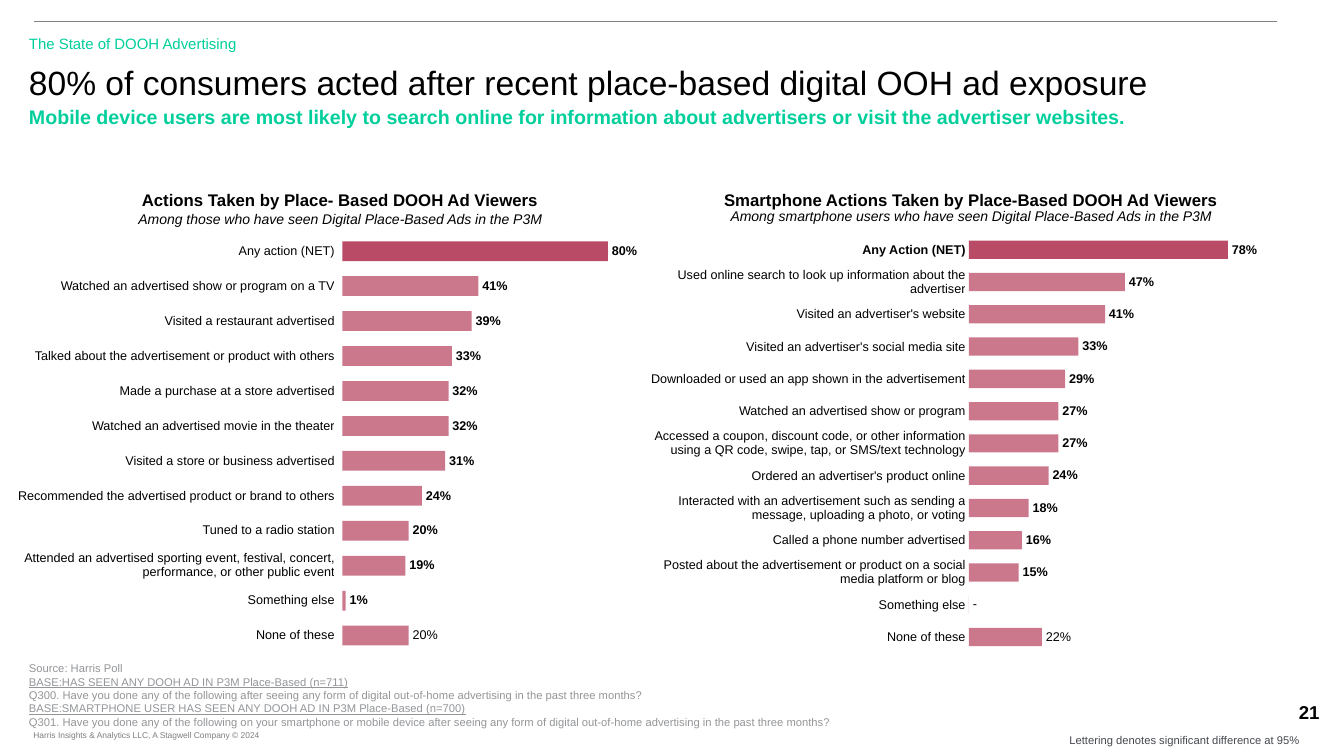
from lxml.etree import SubElement
from pptx import Presentation
from pptx.chart.data import CategoryChartData
from pptx.dml.color import RGBColor
from pptx.enum.chart import XL_CHART_TYPE as ChartType, XL_LABEL_POSITION as LabelPosition
from pptx.enum.shapes import MSO_CONNECTOR as Connector
from pptx.enum.text import MSO_ANCHOR as Anchor, MSO_AUTO_SIZE as AutoSize, PP_ALIGN as Align
from pptx.oxml import parse_xml
from pptx.oxml.ns import nsdecls, qn
from pptx.util import Cm, Pt

COLORS = {"black": "000000", "green": "00CF9C", "source": "939598", "copyright": "7F7F7F",
          "note": "44474E", "rule": "808080", "bar": "BA4C67", "net bar": "A31034"}
INSETS = (0.25, 0.13, 0.25, 0.13)
LABEL_WIDTH = 8.15    # answer column of a panel
BAR_START = 8.34      # zero line, from the panel's left edge
BAR_FULL = 8.37       # length of a 100% bar
HEADING_DROP = 1.24   # from a panel's top to its rows

VIEWER_ACTIONS = [
    ("Any action (NET)", 0.80), ("Watched an advertised show or program on a TV", 0.41),
    ("Visited a restaurant advertised", 0.39),
    ("Talked about the advertisement or product with others", 0.33),
    ("Made a purchase at a store advertised", 0.32),
    ("Watched an advertised movie in the theater", 0.32),
    ("Visited a store or business advertised", 0.31),
    ("Recommended the advertised product or brand to others", 0.24),
    ("Tuned to a radio station", 0.20),
    ("Attended an advertised sporting event, festival, concert, performance, "
     "or other public event", 0.19),
    ("Something else", 0.01), ("None of these", 0.20)]
PHONE_ACTIONS = [
    ("Any Action (NET)", 0.78),
    ("Used online search to look up information about the advertiser", 0.47),
    ("Visited an advertiser's website", 0.41),
    ("Visited an advertiser's social media site", 0.33),
    ("Downloaded or used an app shown in the advertisement", 0.29),
    ("Watched an advertised show or program", 0.27),
    ("Accessed a coupon, discount code, or other information using a QR code, swipe, tap, "
     "or SMS/text technology", 0.27),
    ("Ordered an advertiser's product online", 0.24),
    ("Interacted with an advertisement such as sending a message, uploading a photo, "
     "or voting", 0.18),
    ("Called a phone number advertised", 0.16),
    ("Posted about the advertisement or product on a social media platform or blog", 0.15),
    ("Something else", 0), ("None of these", 0.22)]
SOURCE_LINES = [
    ("Source: Harris Poll", False),
    ("BASE:HAS SEEN ANY DOOH AD IN P3M Place-Based (n=711)", True),
    ("Q300. Have you done any of the following after seeing any form of digital out-of-home "
     "advertising in the past three months?", False),
    ("BASE:SMARTPHONE USER HAS SEEN ANY DOOH AD IN P3M Place-Based (n=700)", True),
    ("Q301. Have you done any of the following on your smartphone or mobile device after seeing "
     "any form of digital out-of-home advertising in the past three months?", False)]


def style_font(font, size, color, bold=False, italic=False, underline=False):
    font.name, font.size = "Arial", Pt(size)
    font.bold, font.italic, font.underline = bold, italic, underline
    font.color.rgb = RGBColor.from_string(COLORS[color])


def add_span(para, text, size, color, align=Align.LEFT, **look):
    para.alignment = align
    span = para.add_run()
    span.text = text
    style_font(span.font, size, color, **look)


def set_frame(frame, insets=INSETS, wrap=True):
    frame.word_wrap, frame.auto_size = wrap, AutoSize.NONE
    frame.vertical_anchor = Anchor.TOP
    (frame.margin_left, frame.margin_top,
     frame.margin_right, frame.margin_bottom) = (Cm(side) for side in insets)


def add_text(page, box, text, size, color, insets=INSETS, wrap=True, **look):
    frame = page.shapes.add_textbox(*(Cm(side) for side in box)).text_frame
    set_frame(frame, insets, wrap)
    add_span(frame.paragraphs[0], text, size, color, **look)


def fill_placeholder(holder, box, text, size, color, bold=False):
    holder.left, holder.top, holder.width, holder.height = (Cm(side) for side in box)
    set_frame(holder.text_frame)
    para = holder.text_frame.paragraphs[0]
    para.space_before = Pt(0)
    add_span(para, text, size, color, bold=bold)


def add_header(page, box):
    left, top, width, _ = box
    # Rule across the top
    rule = page.shapes.add_connector(Connector.STRAIGHT, Cm(left + 0.38), Cm(top),
                                     Cm(left + 31.7), Cm(top))
    rule.line.color.rgb = RGBColor.from_string(COLORS["rule"])
    rule.line.width = Pt(0.5)
    SubElement(rule.element.spPr, qn("a:effectLst"))
    # Section name, title and subtitle
    holders = {holder.placeholder_format.idx: holder for holder in page.placeholders}
    fill_placeholder(holders[1], (left, top + 0.2, 16.94, 0.71),
                     "The State of DOOH Advertising", 10.7, "green")
    fill_placeholder(holders[0], (left, top + 0.89, 31.67, 1.19),
                     "80% of consumers acted after recent place-based digital OOH ad exposure",
                     24, "black")
    fill_placeholder(holders[3], (left, top + 1.97, width, 1.04),
                     "Mobile device users are most likely to search online for information about "
                     "advertisers or visit the advertiser websites.", 14, "green", bold=True)
    for index in (2, 4):
        unused = holders[index].element
        unused.getparent().remove(unused)


def add_answers(page, box, answers, net_bold):
    table = page.shapes.add_table(len(answers), 1, *(Cm(side) for side in box)).table
    table.first_row = table.horz_banding = False
    for index, (answer, _) in enumerate(answers):
        table.rows[index].height = Cm(box[3] / len(answers))
        cell = table.cell(index, 0)
        cell.fill.background()
        cell.vertical_anchor = Anchor.MIDDLE
        cell.margin_left = cell.margin_top = cell.margin_right = cell.margin_bottom = 0
        add_span(cell.text_frame.paragraphs[0], answer, 9, "black", Align.RIGHT,
                 bold=net_bold and index == 0)


def add_bars(page, box, answers, bar_start):
    data = CategoryChartData(number_format="0%")
    data.categories = [str(index + 1) for index in range(len(answers))]
    data.add_series("Series 1", [share for _, share in answers])
    chart = page.shapes.add_chart(ChartType.BAR_CLUSTERED,
                                  *(Cm(side) for side in box), data).chart
    chart.has_legend = chart.has_title = False
    style_font(chart.font, 14, "black")
    # Hidden axes
    chart.category_axis.reverse_order = True
    chart.value_axis.minimum_scale, chart.value_axis.maximum_scale = 0, 1
    chart.value_axis.has_major_gridlines = False
    chart.category_axis.visible = chart.value_axis.visible = False
    # Bars and their labels
    plot = chart.plots[0]
    plot.gap_width, plot.vary_by_categories = 77, False
    series = plot.series[0]
    series.invert_if_negative = False
    labels = series.data_labels
    labels.show_value, labels.position = True, LabelPosition.OUTSIDE_END
    labels.number_format, labels.number_format_is_linked = "0%", False
    style_font(labels.font, 9, "black", bold=True)
    for part, color in ((series, "bar"), (series.points[0], "net bar")):
        part.format.fill.solid()
        part.format.fill.fore_color.rgb = RGBColor.from_string(COLORS[color])
    for index, (answer, share) in enumerate(answers):
        if answer == "None of these" or share == 0:
            label = series.points[index].data_label
            text = f"{share:.0%}" if share else "-"
            add_span(label.text_frame.paragraphs[0], text, 9, "black")
            label.position = LabelPosition.OUTSIDE_END
    for color in chart.element.iter(qn("a:srgbClr")):
        if color.get("val") in (COLORS["bar"], COLORS["net bar"]):
            SubElement(color, qn("a:alpha"), val="75000")
    # Plot area
    area = chart.element.find(".//" + qn("c:plotArea"))
    for layout in area.findall(qn("c:layout")):
        area.remove(layout)
    sizes = {"x": (bar_start - box[0]) / box[2], "y": 0, "w": BAR_FULL / box[2], "h": 1}
    sides = "".join(f'<c:{side} val="{size:.3f}"/>' for side, size in sizes.items())
    area.insert(0, parse_xml(
        f'<c:layout {nsdecls("c")}><c:manualLayout><c:layoutTarget val="inner"/>'
        f'<c:xMode val="edge"/><c:yMode val="edge"/>{sides}</c:manualLayout></c:layout>'))


def add_panel(page, box, heading, base, base_drop, answers, chart_shift, chart_width,
              net_bold=False):
    left, top, width, height = box
    add_text(page, (left, top, width, 0.76), heading, 12, "black", align=Align.CENTER, bold=True)
    add_text(page, (left, top + base_drop, width, 0.69), base, 10, "black",
             align=Align.CENTER, italic=True)
    rows_top, rows_height = top + HEADING_DROP, height - HEADING_DROP
    add_bars(page, (left + chart_shift, rows_top, chart_width, rows_height), answers,
             left + BAR_START)
    add_answers(page, (left, rows_top, LABEL_WIDTH, rows_height), answers, net_bold)


def add_footer(page, box):
    left, top, width, height = box
    # Sources and question wording
    sources = page.shapes.add_textbox(Cm(left), Cm(top), Cm(25.7), Cm(1.96)).text_frame
    set_frame(sources)
    for index, (line, underline) in enumerate(SOURCE_LINES):
        para = sources.add_paragraph() if index else sources.paragraphs[0]
        add_span(para, line, 8, "source", underline=underline)
    # Copyright, significance note and page number
    add_text(page, (left + 0.36, top + 1.73, 6.07, 0.51),
             "Harris Insights & Analytics LLC, A Stagwell Company © 2024", 6, "copyright",
             insets=(0, 0.13, 0.25, 0.13), wrap=False)
    add_text(page, (left + 26.47, top + height - 0.56, 5.97, 0.36),
             "Lettering denotes significant difference at 95%", 8, "note", insets=(0, 0, 0, 0))
    add_text(page, (left + width - 1.67, top + 0.99, 2.59, 0.84), "21", 13.3, "black",
             align=Align.CENTER, bold=True)


def main():
    deck = Presentation()
    deck.slide_width, deck.slide_height = Cm(33.87), Cm(19.05)
    page = deck.slides.add_slide(deck.slide_layouts.get_by_name("Comparison"))
    add_header(page, (0.48, 0.54, 32.89, 3.01))
    add_panel(page, (0.28, 4.65, 16.58, 11.81), "Actions Taken by Place- Based DOOH Ad Viewers",
              "Among those who have seen Digital Place-Based Ads in the P3M", 0.52,
              VIEWER_ACTIONS, -0.2, 20.45)
    add_panel(page, (16.18, 4.65, 16.58, 11.81),
              "Smartphone Actions Taken by Place-Based DOOH Ad Viewers",
              "Among smartphone users who have seen Digital Place-Based Ads in the P3M", 0.46,
              PHONE_ACTIONS, 0.84, 15.77, net_bold=True)
    add_footer(page, (0.48, 16.54, 32.89, 2.51))
    deck.save("out.pptx")


if __name__ == "__main__":
    main()
